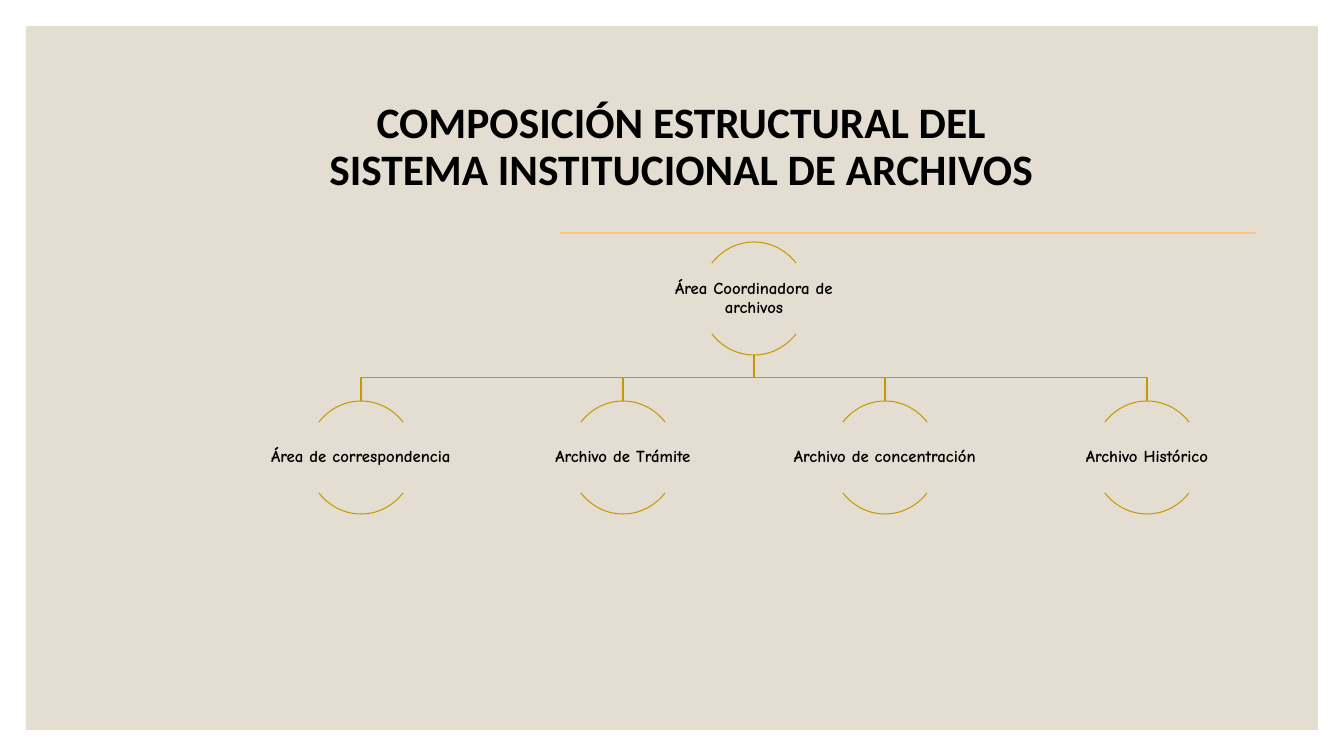
import pptx
import pptx.util
import pptx.dml.color
import pptx.enum.shapes
import pptx.enum.text
import pptx.oxml

RGBColor = pptx.dml.color.RGBColor
MSO_SHAPE = pptx.enum.shapes.MSO_SHAPE
ANCHOR = pptx.enum.text.MSO_ANCHOR
Pt = pptx.util.Pt

BEIGE = RGBColor(0xE3, 0xDE, 0xD1)
ORANGE = RGBColor(0xFF, 0xC2, 0x7A)
GOLD = RGBColor(0xCA, 0x97, 0x00)
BLACK = RGBColor(0, 0, 0)

EMU_PER_PX = 12192000 / 1344


def px(*lengths):
    """Turn pixel lengths into EMU."""
    return [round(n * EMU_PER_PX) for n in lengths]


def add_label(box, text, font_name, size, anchor, margins):
    """Add a centred bold text box; margins are (horizontal, vertical) px."""
    tf = s.shapes.add_textbox(*px(*box)).text_frame
    tf.word_wrap = True
    tf.vertical_anchor = anchor
    tf.margin_left = tf.margin_right = px(margins[0])[0]
    tf.margin_top = tf.margin_bottom = px(margins[1])[0]
    p = tf.paragraphs[0]
    p.text = text
    p.alignment = pptx.enum.text.PP_ALIGN.CENTER
    p.line_spacing = 0.9
    font = p.runs[0].font
    font.name = font_name
    font.size = Pt(size)
    font.bold = True
    font.color.rgb = BLACK


prs = pptx.Presentation()
prs.slide_width, prs.slide_height = px(1344, 756)
s = prs.slides.add_slide(prs.slide_layouts[6])

panel = s.shapes.add_shape(MSO_SHAPE.RECTANGLE, *px(26, 26, 1292, 704))
panel.shadow.inherit = False
panel.fill.solid()
panel.fill.fore_color.rgb = BEIGE
panel.line.fill.background()

add_label((318, 58, 726, 142),
          "COMPOSICIÓN ESTRUCTURAL DEL SISTEMA INSTITUCIONAL DE ARCHIVOS",
          "Calibri", 31, ANCHOR.BOTTOM, (10, 5))

rule = s.shapes.add_connector(pptx.enum.shapes.MSO_CONNECTOR.STRAIGHT,
                              *px(560, 233, 1256, 233))
rule.line.color.rgb = ORANGE
rule.line.width = Pt(1.5)
rule._element.spPr.append(pptx.oxml.parse_xml(
    '<a:effectLst xmlns:a="http://schemas.openxmlformats.org/drawingml/2006/main"/>'))

# Organisation chart: one root above four evenly spaced units
ROOT_X, ROOT_TOP = 754, 242
UNIT_TOP, FIRST_UNIT_X, UNIT_STEP = 401, 361, 262
ARC_W, ARC_H = 108, 113
LABEL_W, LABEL_H = 217, 71
BAR_Y = 378
ARC_ANGLES = [(132, 192), (24, 84)]  # top and bottom, in 100000ths of raw units

units = ["Área de correspondencia", "Archivo de Trámite",
         "Archivo de concentración", "Archivo Histórico"]
nodes = [("Área Coordinadora de archivos", ROOT_X, ROOT_TOP)]
nodes += [(name, FIRST_UNIT_X + i * UNIT_STEP, UNIT_TOP)
          for i, name in enumerate(units)]

for name, x, top in reversed(nodes[1:]):
    builder = s.shapes.build_freeform(ROOT_X, ROOT_TOP + ARC_H, scale=EMU_PER_PX)
    builder.add_line_segments([(ROOT_X, BAR_Y), (x, BAR_Y), (x, top)], close=False)
    branch = builder.convert_to_shape()
    branch.shadow.inherit = False
    branch.fill.background()
    branch.line.color.rgb = GOLD
    branch.line.width = Pt(0.75)

for name, x, top in nodes:
    for start, end in ARC_ANGLES:
        arc = s.shapes.add_shape(MSO_SHAPE.ARC,
                                 *px(x - ARC_W / 2, top, ARC_W, ARC_H))
        arc.adjustments[0] = start
        arc.adjustments[1] = end
        arc.shadow.inherit = False
        arc.fill.background()
        arc.line.color.rgb = GOLD
        arc.line.width = Pt(0.75)
    add_label((x - LABEL_W / 2, top + 21, LABEL_W, LABEL_H),
              name, "Comic Neue", 12, ANCHOR.MIDDLE, (1, 1))

prs.save("out.pptx")
